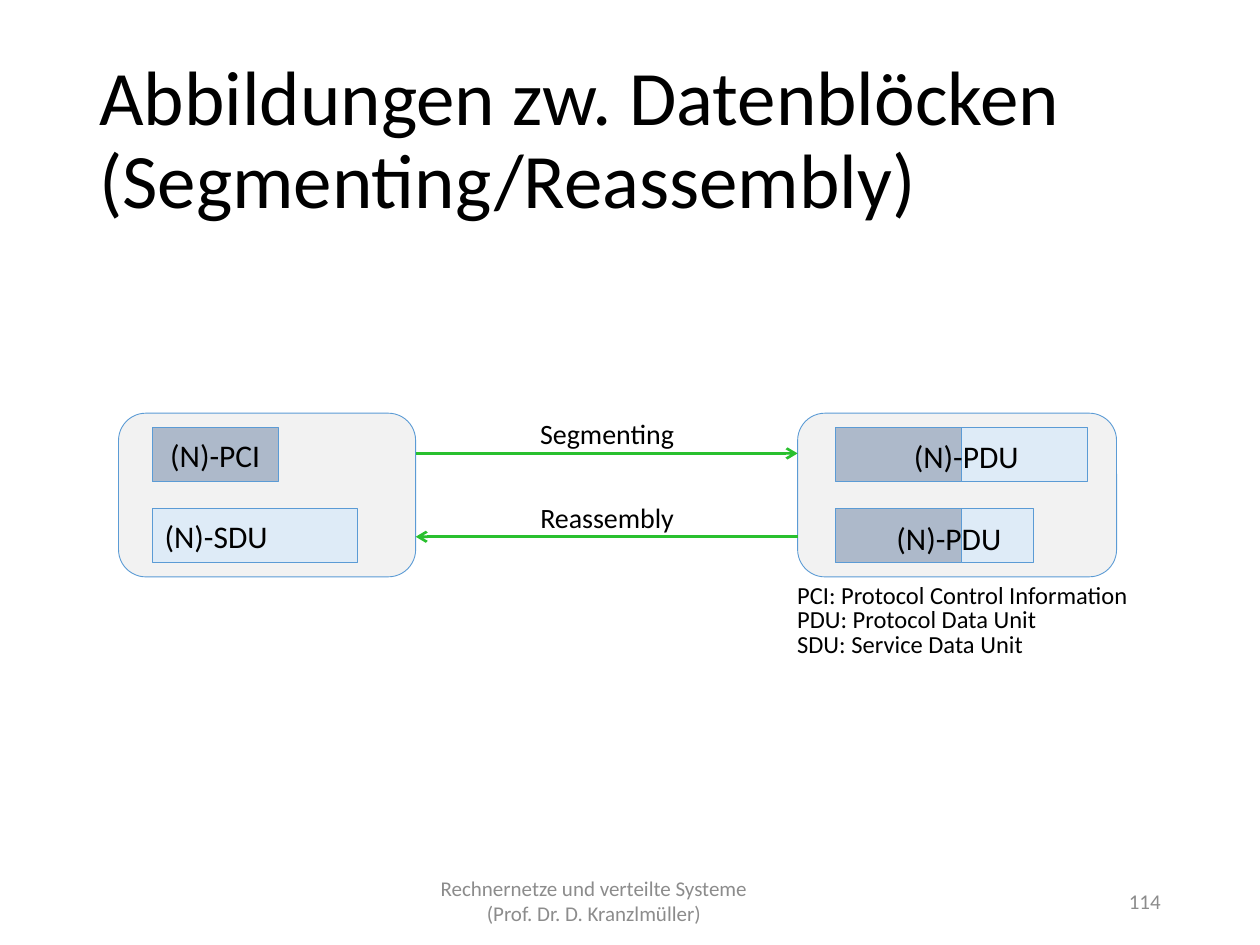
from lxml.etree import SubElement
from pptx import Presentation
from pptx.dml.color import RGBColor
from pptx.enum.shapes import MSO_CONNECTOR, MSO_SHAPE
from pptx.enum.text import MSO_ANCHOR, PP_ALIGN
from pptx.oxml.ns import qn
from pptx.util import Cm, Pt


def paint(color_format, hex_color):
    color_format.rgb = RGBColor.from_string(hex_color)


def add_block(kind, left, top, width, height, fill=None, text="", size=18,
              align=PP_ALIGN.LEFT, anchor=MSO_ANCHOR.MIDDLE, color="000000", wrap=True):
    """Add a filled shape, or a plain text box when kind is None."""
    area = Cm(left), Cm(top), Cm(width), Cm(height)
    if kind is None:
        block = slide.shapes.add_textbox(*area)
    else:
        block = slide.shapes.add_shape(kind, *area)
        block.shadow.inherit = False
        block.fill.solid()
        paint(block.fill.fore_color, fill)
        paint(block.line.color, "5B9BD5")
        block.line.width = Pt(0.5)
    frame = block.text_frame
    frame.word_wrap = wrap
    frame.vertical_anchor = anchor
    frame.text = text
    for paragraph in frame.paragraphs:
        paragraph.alignment = align
        for run in paragraph.runs:
            run.font.name = "Calibri"
            run.font.size = Pt(size)
            paint(run.font.color, color)
    return block


PANEL, PCI, SDU = "F2F2F2", "ADB9CA", "DEEBF7"
GREEN, GREY = "29C02E", "8C8C8C"

presentation = Presentation()
presentation.slide_width, presentation.slide_height = Cm(25.4), Cm(19.05)
slide = presentation.slides.add_slide(presentation.slide_layouts[6])

# Title
title = add_block(None, 1.75, 1.02, 21.9, 3.68, size=44,
                  text="Abbildungen zw. Datenblöcken\v(Segmenting/Reassembly)")
title.text_frame.paragraphs[0].line_spacing = 0.9

# Panels
left_edge, right_edge = 8.38, 16.08
panel_top, panel_height = 8.33, 3.3
add_block(MSO_SHAPE.ROUNDED_RECTANGLE, 2.39, panel_top, left_edge - 2.39, panel_height, PANEL)
add_block(MSO_SHAPE.ROUNDED_RECTANGLE, right_edge, panel_top, 6.43, panel_height, PANEL)

# Data blocks in two rows
row_tops = 8.62, 10.26
row_height, pci_width = 1.09, 2.54
block_left, pdu_left = 3.07, 16.84
add_block(MSO_SHAPE.RECTANGLE, block_left, row_tops[0], pci_width, row_height, PCI,
          "(N)-PCI", align=PP_ALIGN.CENTER)
add_block(MSO_SHAPE.RECTANGLE, block_left, row_tops[1], 4.14, row_height, SDU, "(N)-SDU")
for top, sdu_width, label_left in zip(row_tops, (2.54, 1.45), (18.16, 17.81)):
    add_block(MSO_SHAPE.RECTANGLE, pdu_left, top, pci_width, row_height, PCI)
    add_block(MSO_SHAPE.RECTANGLE, pdu_left + pci_width, top, sdu_width, row_height, SDU)
    add_block(None, label_left, top + 0.07, 2.64, 1.02, text="(N)-PDU",
              align=PP_ALIGN.CENTER, anchor=MSO_ANCHOR.TOP, wrap=False)

# Arrows between the panels, with their labels
for operation, y, start, end in (("Segmenting", 9.14, left_edge, right_edge),
                                 ("Reassembly", 10.82, right_edge, left_edge)):
    arrow = slide.shapes.add_connector(MSO_CONNECTOR.STRAIGHT, Cm(start), Cm(y), Cm(end), Cm(y))
    paint(arrow.line.color, GREEN)
    arrow.line.width = Pt(1.5)
    SubElement(arrow.line._get_or_add_ln(), qn("a:tailEnd"), type="arrow")
    SubElement(arrow._element.spPr, qn("a:effectLst"))
    add_block(None, left_edge, y - 0.86, 7.72, 0.94, text=operation, size=16,
              align=PP_ALIGN.CENTER, anchor=MSO_ANCHOR.TOP)

# Abbreviations
abbreviations = (("PCI: Protocol Control Information", 7.26),
                 ("PDU: Protocol Data Unit", 5.38),
                 ("SDU: Service Data Unit", 5.11))
for index, (meaning, width) in enumerate(abbreviations):
    add_block(None, 15.82, 11.56 + 0.5 * index, width, 0.86, text=meaning, size=14,
              anchor=MSO_ANCHOR.TOP, wrap=False)

# Footer: the first line is centred further left by a right indent
footer = add_block(None, 8.41, 17.65, 8.58, 1.02, size=12, align=PP_ALIGN.CENTER, color=GREY,
                   text="Rechnernetze und verteilte Systeme\n(Prof. Dr. D. Kranzlmüller)")
footer.text_frame.paragraphs[0]._p.get_or_add_pPr().set("marR", str(Cm(1.45)))
add_block(None, 17.93, 17.65, 5.72, 1.02, text="114", size=12, align=PP_ALIGN.RIGHT, color=GREY)

presentation.save("out.pptx")
